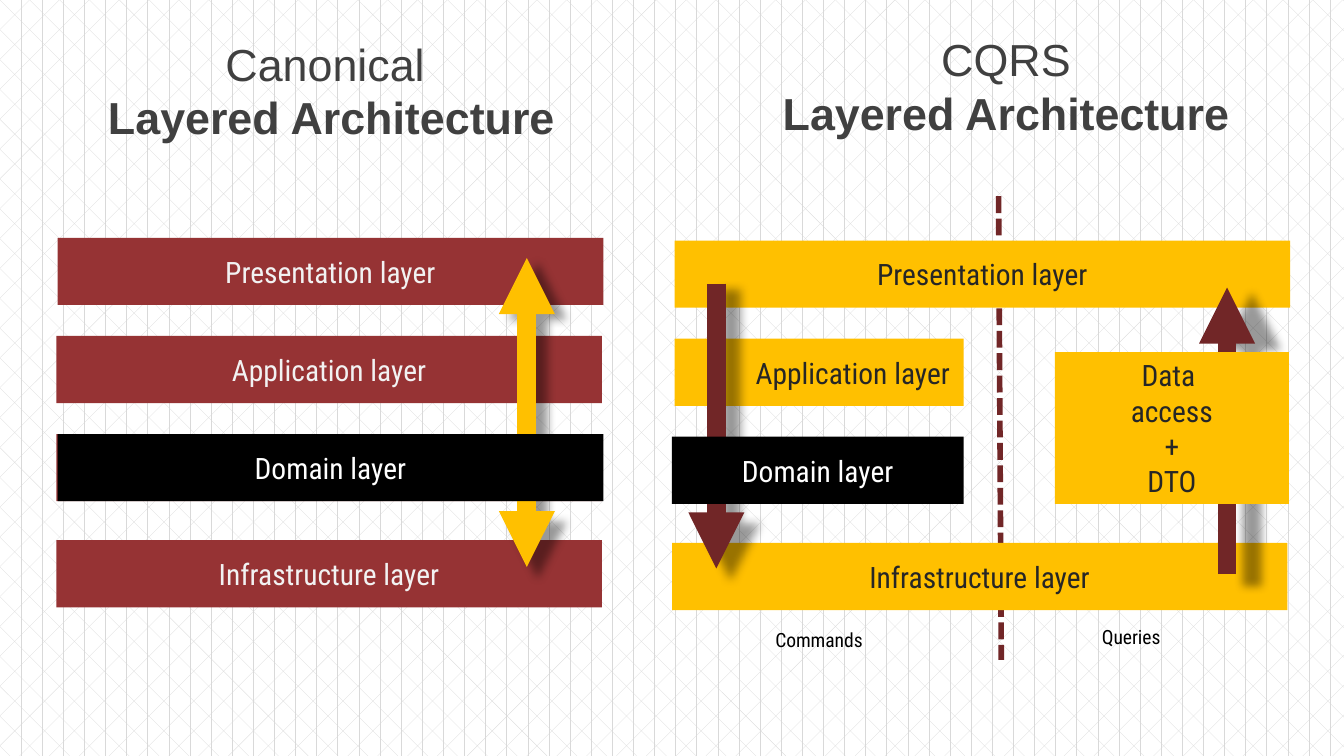
from dataclasses import dataclass

from lxml import etree
from pptx import Presentation
from pptx.dml.color import RGBColor
from pptx.enum.dml import MSO_LINE, MSO_PATTERN
from pptx.enum.shapes import MSO_CONNECTOR, MSO_SHAPE
from pptx.enum.text import MSO_ANCHOR, MSO_AUTO_SIZE, PP_ALIGN
from pptx.oxml.ns import qn
from pptx.util import Inches, Pt

RECTANGLE = MSO_SHAPE.RECTANGLE
STRAIGHT = MSO_CONNECTOR.STRAIGHT
DIVOT = MSO_PATTERN.DIVOT
SQUARE_DOT = MSO_LINE.SQUARE_DOT
LEFT, CENTER, RIGHT = PP_ALIGN.LEFT, PP_ALIGN.CENTER, PP_ALIGN.RIGHT
TOP, MIDDLE = MSO_ANCHOR.TOP, MSO_ANCHOR.MIDDLE
FIT_SHAPE = MSO_AUTO_SIZE.SHAPE_TO_FIT_TEXT


@dataclass(frozen=True)
class Theme:
    heading_font: str = "Arial"
    body_font: str = "Roboto Condensed"
    heading_size: float = 24
    layer_size: float = 15.8
    caption_size: float = 10.5
    arrow_width: float = 10
    divider_width: float = 3
    red: str = "963334"
    maroon: str = "712627"
    amber: str = "FFC000"
    black: str = "000000"
    white: str = "FFFFFF"
    pale: str = "F2F2F2"
    ink: str = "262626"
    heading: str = "404040"
    pattern: str = "D9D9D9"


THEME = Theme()
SLIDE_WIDTH = Inches(10)
SLIDE_HEIGHT = SLIDE_WIDTH * 9 // 16

# Layer rows: the last one stands a little further down.
FIRST_ROW, ROW_PITCH, LAST_ROW_GAP, LAYER_HEIGHT = 1.77, 0.73, 0.06, 0.5
CANONICAL_WIDTH, CQRS_WIDTH = 4.06, 4.58
CQRS_DROP = 0.02
HEADING_SIZE = (3.57, 0.91)

CANONICAL_HEADING = ("Canonical ", "Layered Architecture")
CQRS_HEADING = ("CQRS", "Layered Architecture")

# text, row, left, fill, text colour
CANONICAL_LAYERS = [
    ("", 2, 0.42, THEME.red, THEME.white),
    ("Presentation layer", 0, 0.43, THEME.red, THEME.pale),
    ("Application layer", 1, 0.42, THEME.red, THEME.pale),
    ("Infrastructure layer", 3, 0.42, THEME.red, THEME.pale),
]
# text, row, left, width, alignment
CQRS_LAYERS = [
    ("Presentation layer", 0, 5.02, CQRS_WIDTH, CENTER),
    ("Application layer", 1, 5.02, 2.15, RIGHT),
    ("Infrastructure layer", 3, 5, CQRS_WIDTH, CENTER),
]
# left, width, drop
DOMAIN_LAYERS = [(0.43, CANONICAL_WIDTH, 0), (5, 2.17, CQRS_DROP)]
DATA_ACCESS = ("Data ", "access", "+", "DTO")
DATA_ACCESS_BOX = (7.85, 2.62, 1.74, 1.13)
DIVIDER = ((7.43, 1.46), (7.45, 4.91))
# x, top, bottom, colour, arrowheads
CANONICAL_ARROW = (3.92, 1.92, 4.22, THEME.amber, ("headEnd", "tailEnd"))
CQRS_ARROWS = [
    (5.33, 2.11, 4.23, THEME.maroon, ("tailEnd",)),
    (9.13, 2.14, 4.27, THEME.maroon, ("headEnd",)),
]
CAPTIONS = [("Commands", (5.67, 4.62, 0.89, 0.28)),
            ("Queries", (8.1, 4.6, 0.67, 0.28))]


def rgb(value):
    return RGBColor.from_string(value)


def row_top(row):
    return FIRST_ROW + ROW_PITCH * row + (LAST_ROW_GAP if row == 3 else 0)


def write(frame, lines, align, size, color, font=THEME.body_font):
    for number, line in enumerate(lines):
        paragraph = frame.paragraphs[0] if number == 0 else frame.add_paragraph()
        paragraph.alignment = align
        run = paragraph.add_run()
        run.text = line
        for key, value in {"name": font, "size": Pt(size), "bold": False}.items():
            setattr(run.font, key, value)
        run.font.color.rgb = rgb(color)


def fit_unwrapped(frame):
    for key, value in {"word_wrap": False, "auto_size": FIT_SHAPE,
                       "vertical_anchor": TOP}.items():
        setattr(frame, key, value)


def write_heading(shape, lines):
    fit_unwrapped(shape.text_frame)
    write(shape.text_frame, lines, CENTER, THEME.heading_size,
          THEME.heading, THEME.heading_font)
    shape.text_frame.paragraphs[-1].runs[0].font.bold = True


def add_block(slide, box, lines, fill, color, align=CENTER):
    block = slide.shapes.add_shape(RECTANGLE, *map(Inches, box))
    block.shadow.inherit = False
    block.fill.solid()
    block.fill.fore_color.rgb = rgb(fill)
    block.line.fill.background()
    block.text_frame.word_wrap = True
    block.text_frame.vertical_anchor = MIDDLE
    if any(lines):
        write(block.text_frame, lines, align, THEME.layer_size, color)


def add_line(slide, start, end, color, width):
    """Add a straight line; return it with its empty effect list."""
    line = slide.shapes.add_connector(STRAIGHT, *map(Inches, start + end))
    line.line.color.rgb = rgb(color)
    line.line.width = Pt(width)
    effects = etree.SubElement(line._element.spPr, qn("a:effectLst"))
    return line, effects


def add_arrow(slide, x, top, bottom, color, heads):
    arrow, effects = add_line(slide, (x, top), (x, bottom), color, THEME.arrow_width)
    for head in heads:
        etree.SubElement(arrow.line._get_or_add_ln(), qn(f"a:{head}"), type="triangle")
    shadow = etree.SubElement(effects, qn("a:outerShdw"), blurRad=str(Pt(5)),
                              sx="102000", sy="102000", algn="ctr", rotWithShape="0")
    shade = etree.SubElement(shadow, qn("a:srgbClr"), val=THEME.black)
    etree.SubElement(shade, qn("a:alpha"), val="40000")


def add_canonical(slide):
    heading = slide.shapes.title
    heading.left, heading.top = Inches(0.68), Inches(0.22)
    heading.width, heading.height = map(Inches, HEADING_SIZE)
    write_heading(heading, CANONICAL_HEADING)
    for text, row, left, fill, color in CANONICAL_LAYERS:
        box = (left, row_top(row), CANONICAL_WIDTH, LAYER_HEIGHT)
        add_block(slide, box, [text], fill, color)
    add_arrow(slide, *CANONICAL_ARROW)


def add_cqrs(slide):
    heading = slide.shapes.add_textbox(*map(Inches, (5.7, 0.19) + HEADING_SIZE))
    write_heading(heading, CQRS_HEADING)
    divider, _ = add_line(slide, *DIVIDER, THEME.maroon, THEME.divider_width)
    divider.line.dash_style = SQUARE_DOT
    for text, row, left, width, align in CQRS_LAYERS:
        box = (left, row_top(row) + CQRS_DROP, width, LAYER_HEIGHT)
        add_block(slide, box, [text], THEME.amber, THEME.ink, align)
    for text, box in CAPTIONS:
        caption = slide.shapes.add_textbox(*map(Inches, box))
        fit_unwrapped(caption.text_frame)
        write(caption.text_frame, [text], LEFT, THEME.caption_size, THEME.black)
    for arrow in CQRS_ARROWS:
        add_arrow(slide, *arrow)
    add_block(slide, DATA_ACCESS_BOX, DATA_ACCESS, THEME.amber, THEME.ink)


def main():
    deck = Presentation()
    deck.slide_width, deck.slide_height = SLIDE_WIDTH, SLIDE_HEIGHT
    slide = deck.slides.add_slide(deck.slide_layouts.get_by_name("Title Only"))
    background = slide.background.fill
    background.patterned()
    background.pattern = DIVOT
    background.fore_color.rgb = rgb(THEME.pattern)
    background.back_color.rgb = rgb(THEME.white)

    add_canonical(slide)
    add_cqrs(slide)
    for left, width, drop in DOMAIN_LAYERS:
        box = (left, row_top(2) + drop, width, LAYER_HEIGHT)
        add_block(slide, box, ["Domain layer"], THEME.black, THEME.white)
    deck.save("out.pptx")


if __name__ == "__main__":
    main()
